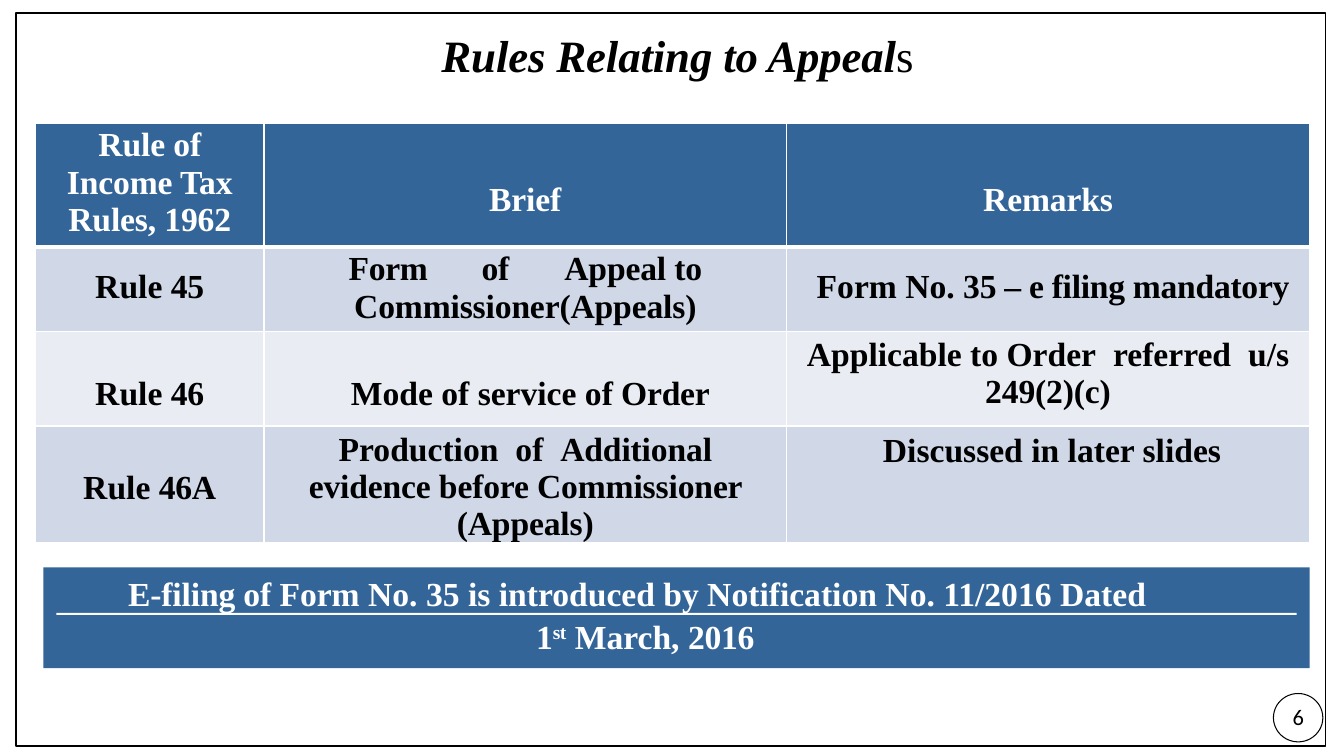
import pptx
import pptx.util
import pptx.dml.color
import pptx.enum.shapes
import pptx.enum.text
import pptx.oxml.ns
import lxml.etree

Inches, Pt = pptx.util.Inches, pptx.util.Pt
RGB = pptx.dml.color.RGBColor.from_string
SHAPE = pptx.enum.shapes.MSO_SHAPE
ALIGN = pptx.enum.text.PP_ALIGN
ANCHOR = pptx.enum.text.MSO_ANCHOR
qn = pptx.oxml.ns.qn

THEME = {
    "blue": "336599", "dark": "D0D8E8", "pale": "E9ECF3",
    "white": "FFFFFF", "black": "000000",
    "serif": "Times New Roman", "sans": "Calibri",
    "title": 32, "body": 24, "page": 16,
}


def write(par, runs, color, size="body", face="serif", bold=True, align=ALIGN.CENTER):
    par.alignment = align
    for text, space in runs:
        run = par.add_run()
        run.text = text
        run.font.color.rgb = RGB(THEME[color])
        look = {"name": THEME[face], "size": Pt(THEME[size]), "bold": bold}
        for key, value in look.items():
            setattr(run.font, key, value)
        run.font._element.set("spc", str(int(space * 100)))


def draw(kind, left, top, width, height, fill=None, line=None):
    shape = slide.shapes.add_shape(kind, Inches(left), Inches(top), Inches(width), Inches(height))
    shape.shadow.inherit = False
    if fill:
        shape.fill.solid()
        shape.fill.fore_color.rgb = RGB(THEME[fill])
    else:
        shape.fill.background()
    if line:
        shape.line.color.rgb = RGB(THEME["black"])
        shape.line.width = Pt(line)
    else:
        shape.line.fill.background()


deck = pptx.Presentation()
deck.slide_width, deck.slide_height = Inches(13.33), Inches(7.5)
slide = deck.slides.add_slide(deck.slide_layouts[5])

title = slide.shapes.title
place = {"left": 3.11, "top": 0.26, "width": 7.22, "height": 0.55}
for key, value in place.items():
    setattr(title, key, Inches(value))
frame = title.text_frame
inset = {"margin_left": 0, "margin_top": Inches(0.01), "margin_right": 0,
         "margin_bottom": 0, "vertical_anchor": ANCHOR.MIDDLE, "word_wrap": True}
for key, value in inset.items():
    setattr(frame, key, value)
head = frame.paragraphs[0]
write(head, [("Rules Relating to Appeal", -0.1)], "black", "title")
head.runs[0].font.italic = True
write(head, [("s", -0.9)], "black", "title", bold=False)

wide = [2.27, 5.18, 5.19]
tall = [1.23, 0.84, 0.94, 1.15]
fills = ["blue", "dark", "pale", "dark"]
sides = [1, 1.5, 1, 1]
rules = [1, 3, 1, 1.5, 1.5]
cells = [
    [(0.04, 0.14, 0.14, [("Rule of Income Tax Rules, 1962", -0.1)]),
     (0.58, 0, 0, [("Brief", -0.1)]),
     (0.58, 0, 0, [("Remarks", -0.1)])],
    [(0.21, 0, 0, [("Rule ", 0), ("45", -0.2)]),
     (0.04, 0.1, 0.1, [("Form\tof\t", -0.2), ("Appeal to Commissioner(Appeals)", -0.1)]),
     (0.21, 0.1, 0, [("Form No. ", 0), ("35 – e filing mandatory", -0.2)])],
    [(0.44, 0, 0, [("Rule ", 0), ("46", -0.2)]),
     (0.44, 0.1, 0, [("Mode of service of", 0), (" Order", -0.2)]),
     (0.05, 0.1, 0.1, [("Applicable to Order", 0), (" ", 6), ("referred", 0), (" ", 6),
                       ("u/s ", 0), ("249(2)(c)", -0.1)])],
    [(0.43, 0, 0, [("Rule ", 0), ("46A", -0.2)]),
     (0.05, 0.1, 0.1, [("Production", 0), (" ", 6), ("of", 0), (" ", 6),
                       ("Additional evidence ", -0.1), ("before Commissioner (Appeals)", -0.1)]),
     (0.06, 0.08, 0, [("Discussed in later slides", 0)])],
]

grid = slide.shapes.add_table(4, 3, Inches(0.35), Inches(1.22), Inches(sum(wide)), Inches(sum(tall))).table
grid.horz_banding = False
for col, width in zip(grid.columns, wide):
    col.width = Inches(width)
for r, line in enumerate(cells):
    grid.rows[r].height = Inches(tall[r])
    for c, (top, left, right, runs) in enumerate(line):
        cell = grid.cell(r, c)
        pad = {"margin_left": left, "margin_top": top, "margin_right": right, "margin_bottom": 0}
        for key, value in pad.items():
            setattr(cell, key, Inches(value))
        props = cell._tc.get_or_add_tcPr()
        edges = {"lnL": sides[c], "lnR": sides[c + 1], "lnT": rules[r], "lnB": rules[r + 1]}
        for tag, thick in edges.items():
            edge = lxml.etree.SubElement(props, qn("a:" + tag), w=str(Pt(thick)))
            ink = lxml.etree.SubElement(edge, qn("a:solidFill"))
            lxml.etree.SubElement(ink, qn("a:srgbClr"), val=THEME["white"])
        cell.fill.solid()
        cell.fill.fore_color.rgb = RGB(THEME[fills[r]])
        write(cell.text_frame.paragraphs[0], runs, "black" if r else "white")

tabs = lxml.etree.SubElement(grid.cell(1, 1).text_frame.paragraphs[0]._p.get_or_add_pPr(), qn("a:tabLst"))
for stop in [1.32, 2.14, 3.6]:
    lxml.etree.SubElement(tabs, qn("a:tab"), pos=str(Inches(stop)), algn="l")

draw(SHAPE.RECTANGLE, 0.43, 5.63, 12.56, 1, fill="blue")
draw(SHAPE.RECTANGLE, 0.56, 6.08, 12.3, 0.02, fill="white")

note = slide.shapes.add_textbox(Inches(0.85), Inches(5.63), Inches(11.37), Inches(0.86)).text_frame
inset = {"margin_left": 0, "margin_top": Inches(0.05), "margin_right": Inches(0.43),
         "margin_bottom": 0, "word_wrap": True}
for key, value in inset.items():
    setattr(note, key, value)
write(note.paragraphs[0],
      [("E-filing of ", -0.1), ("Form No. 35 is introduced by Notification No. 11/2016 Dated", 0)], "white")
date = note.add_paragraph()
date.space_before = Pt(2)
date._p.get_or_add_pPr().set("marL", str(Inches(0.16)))
write(date, [("1", -0.2), ("st", -0.3), (" March, ", 0), ("2016", -0.2)], "white")
date.runs[1].font._element.set("baseline", "30000")

draw(SHAPE.RECTANGLE, 0.16, 0.13, 12.99, 7.27, line=0.96)

page = slide.shapes.add_textbox(Inches(12.63), Inches(6.87), Inches(0.4), Inches(0.48)).text_frame
page.word_wrap = True
page.vertical_anchor = ANCHOR.MIDDLE
write(page.paragraphs[0], [("6", 0)], "black", "page", "sans", False, ALIGN.RIGHT)
draw(SHAPE.FLOWCHART_CONNECTOR, 12.63, 6.88, 0.49, 0.48, line=0.75)

deck.save("out.pptx")
